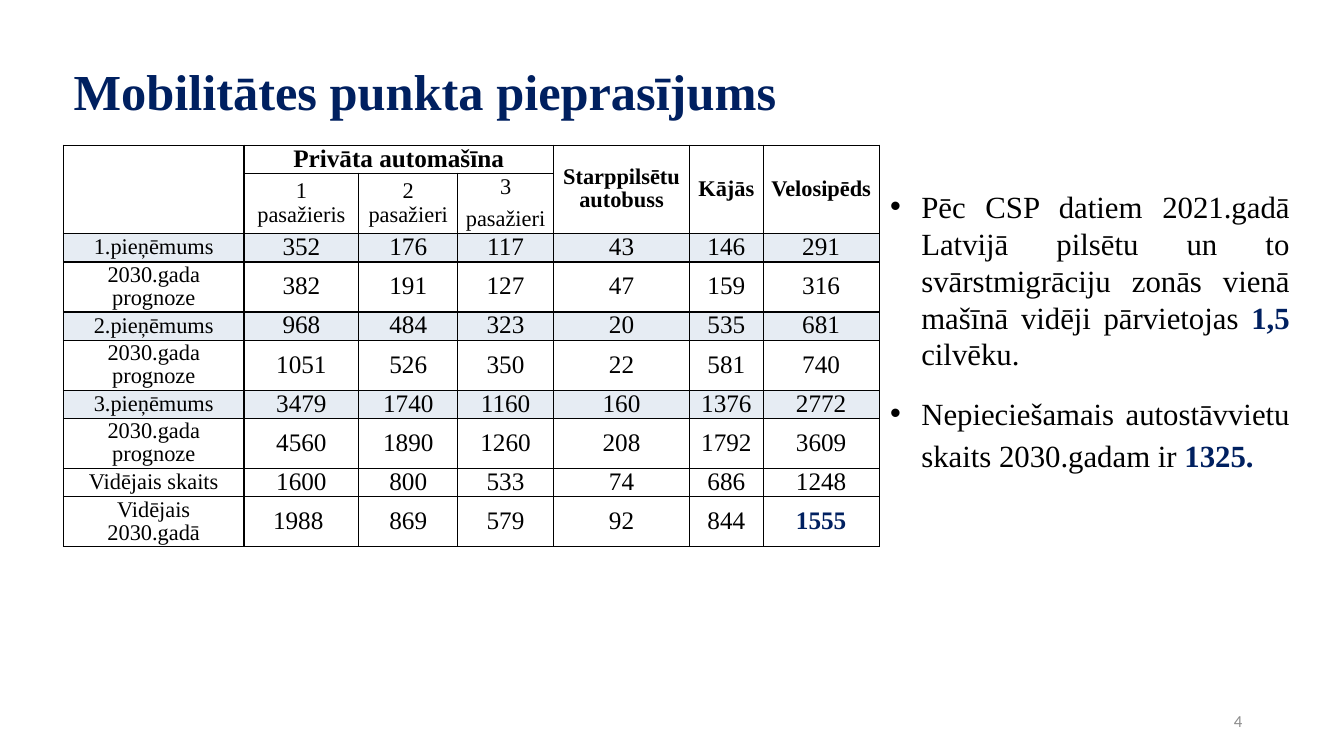
from dataclasses import dataclass
from typing import Optional

from lxml.etree import SubElement
from pptx import Presentation
from pptx.dml.color import RGBColor
from pptx.enum.text import MSO_ANCHOR as Anchor, PP_ALIGN as Align
from pptx.oxml.ns import qn
from pptx.util import Inches, Pt

BLACK = RGBColor(0x00, 0x00, 0x00)
NAVY = RGBColor(0x00, 0x20, 0x60)
GREY = RGBColor(0x8C, 0x8C, 0x8C)
PALE_BLUE = RGBColor(0xE6, 0xEC, 0xF3)
SERIF = "Times New Roman"

COLUMN_WIDTHS = (1.79, 1.14, 0.98, 0.95, 1.35, 0.73, 1.15)
ROW_HEIGHTS = (0.23, 0.6) + (0.24,) * 8


@dataclass
class Style:
    size: float
    color: RGBColor = BLACK
    bold: bool = False
    font: str = SERIF


@dataclass
class Header:
    row: int
    column: int
    lines: tuple[str, ...]
    style: Style
    last_row: int
    last_column: int


@dataclass
class Demand:
    label: str
    values: tuple[str, ...]
    shaded: bool = False


@dataclass
class Bullet:
    spans: tuple[tuple[str, Style], ...]
    before: float = 0
    spacing: Optional[float] = None


LABEL = Style(16)
LABEL_BOLD = Style(16, bold=True)
VALUE = Style(18)
KEY_VALUE = Style(18, NAVY, True)
BODY = Style(22)
BODY_KEY = Style(22, NAVY, True)

HEADERS = (
    Header(0, 0, (), LABEL, 1, 0),
    Header(0, 1, ("Privāta automašīna",), Style(18, bold=True), 0, 3),
    Header(0, 4, ("Starppilsētu autobuss",), LABEL_BOLD, 1, 4),
    Header(0, 5, ("Kājās",), LABEL_BOLD, 1, 5),
    Header(0, 6, ("Velosipēds",), LABEL_BOLD, 1, 6),
    Header(1, 1, ("1 pasažieris",), LABEL, 1, 1),
    Header(1, 2, ("2 pasažieri",), LABEL, 1, 2),
    Header(1, 3, ("3", "pasažieri"), LABEL, 1, 3),
)
DEMANDS = (
    Demand("1.pieņēmums", ("352", "176", "117", "43", "146", "291"), True),
    Demand("2030.gada prognoze", ("382", "191", "127", "47", "159", "316")),
    Demand("2.pieņēmums", ("968", "484", "323", "20", "535", "681"), True),
    Demand("2030.gada prognoze", ("1051", "526", "350", "22", "581", "740")),
    Demand("3.pieņēmums", ("3479", "1740", "1160", "160", "1376", "2772"), True),
    Demand("2030.gada prognoze", ("4560", "1890", "1260", "208", "1792", "3609")),
    Demand("Vidējais skaits", ("1600", "800", "533", "74", "686", "1248")),
    Demand("Vidējais 2030.gadā", ("1988 ", "869", "579", "92", "844", "1555")),
)
BULLETS = (
    Bullet((
        ("Pēc CSP datiem 2021.gadā Latvijā pilsētu un to svārstmigrāciju zonās "
         "vienā mašīnā vidēji pārvietojas ", BODY),
        ("1,5 ", BODY_KEY),
        ("cilvēku.", BODY),
    )),
    Bullet((
        ("Nepieciešamais autostāvvietu skaits 2030.gadam ir ", BODY),
        ("1325.", BODY_KEY),
    ), before=12, spacing=1.15),
)


def add_span(para, text: str, style: Style) -> None:
    span = para.add_run()
    span.text = text
    span.font.name = style.font
    span.font.size = Pt(style.size)
    span.font.bold = style.bold
    span.font.color.rgb = style.color


def next_para(frame, index: int):
    return frame.add_paragraph() if index else frame.paragraphs[0]


def add_box(page, left: float, top: float, width: float, height: float):
    box = page.shapes.add_textbox(Inches(left), Inches(top), Inches(width), Inches(height))
    box.text_frame.word_wrap = True
    return box.text_frame


def outline_cell(cell) -> None:
    properties = cell._tc.get_or_add_tcPr()
    for position, side in enumerate(("lnL", "lnR", "lnT", "lnB")):
        line = SubElement(properties, qn(f"a:{side}"), w=str(Pt(1)))
        fill = SubElement(line, qn("a:solidFill"))
        SubElement(fill, qn("a:srgbClr"), val=str(BLACK))
        properties.insert(position, line)


def fill_cell(cell, lines: tuple[str, ...], style: Style) -> None:
    for index, text in enumerate(lines):
        para = next_para(cell.text_frame, index)
        para.alignment = Align.CENTER
        para.space_before = Pt(6)
        para.line_spacing = 0.93
        add_span(para, text, style)


def add_demand_table(page) -> None:
    frame = page.shapes.add_table(len(ROW_HEIGHTS), len(COLUMN_WIDTHS), Inches(0.63),
                                  Inches(1.44), Inches(8.1), Inches(4.25))
    table = frame.table
    table.first_row = table.horz_banding = False
    for column, width in zip(table.columns, COLUMN_WIDTHS):
        column.width = Inches(width)
    for row, height in zip(table.rows, ROW_HEIGHTS):
        row.height = Inches(height)
    for cell in table.iter_cells():
        cell.vertical_anchor = Anchor.MIDDLE
        cell.margin_left = cell.margin_right = Inches(0.07)
        cell.margin_top = cell.margin_bottom = 0
        cell.fill.background()
        outline_cell(cell)
    for header in HEADERS:
        cell = table.cell(header.row, header.column)
        last = table.cell(header.last_row, header.last_column)
        if cell != last and (header.row, header.column) != (header.last_row, header.last_column):
            cell.merge(last)
        fill_cell(cell, header.lines, header.style)
    for row, demand in enumerate(DEMANDS, start=2):
        for column, text in enumerate((demand.label, *demand.values)):
            cell = table.cell(row, column)
            style = VALUE if column else LABEL
            fill_cell(cell, (text,), KEY_VALUE if text == "1555" else style)
            if demand.shaded:
                cell.fill.solid()
                cell.fill.fore_color.rgb = PALE_BLUE


def add_title(page) -> None:
    title = page.shapes.title
    title.left, title.top = Inches(0.63), Inches(0.55)
    title.width, title.height = Inches(11.41), Inches(0.71)
    title.text_frame.vertical_anchor = Anchor.TOP
    para = title.text_frame.paragraphs[0]
    para.alignment = Align.LEFT
    add_span(para, "Mobilitātes punkta pieprasījums", Style(36, NAVY, True))


def add_bullets(page) -> None:
    frame = add_box(page, 8.73, 1.81, 4.16, 2.95)
    for index, bullet in enumerate(BULLETS):
        para = next_para(frame, index)
        para.alignment = Align.JUSTIFY
        para.space_before = Pt(bullet.before)
        para.line_spacing = bullet.spacing
        properties = para._p.get_or_add_pPr()
        properties.set("marL", str(Inches(0.31)))
        properties.set("indent", str(-Inches(0.31)))
        SubElement(properties, qn("a:buFont"), typeface="Arial")
        SubElement(properties, qn("a:buChar"), char="•")
        for text, style in bullet.spans:
            add_span(para, text, style)


def add_page_number(page) -> None:
    frame = add_box(page, 9.42, 6.95, 3, 0.4)
    frame.vertical_anchor = Anchor.MIDDLE
    para = frame.paragraphs[0]
    para.alignment = Align.RIGHT
    add_span(para, "4", Style(12, GREY, font="Calibri"))


def main() -> None:
    deck = Presentation()
    deck.slide_width, deck.slide_height = Inches(13.33), Inches(7.5)
    page = deck.slides.add_slide(deck.slide_layouts[5])
    add_page_number(page)
    add_demand_table(page)
    add_title(page)
    add_bullets(page)
    deck.save("out.pptx")


if __name__ == "__main__":
    main()
